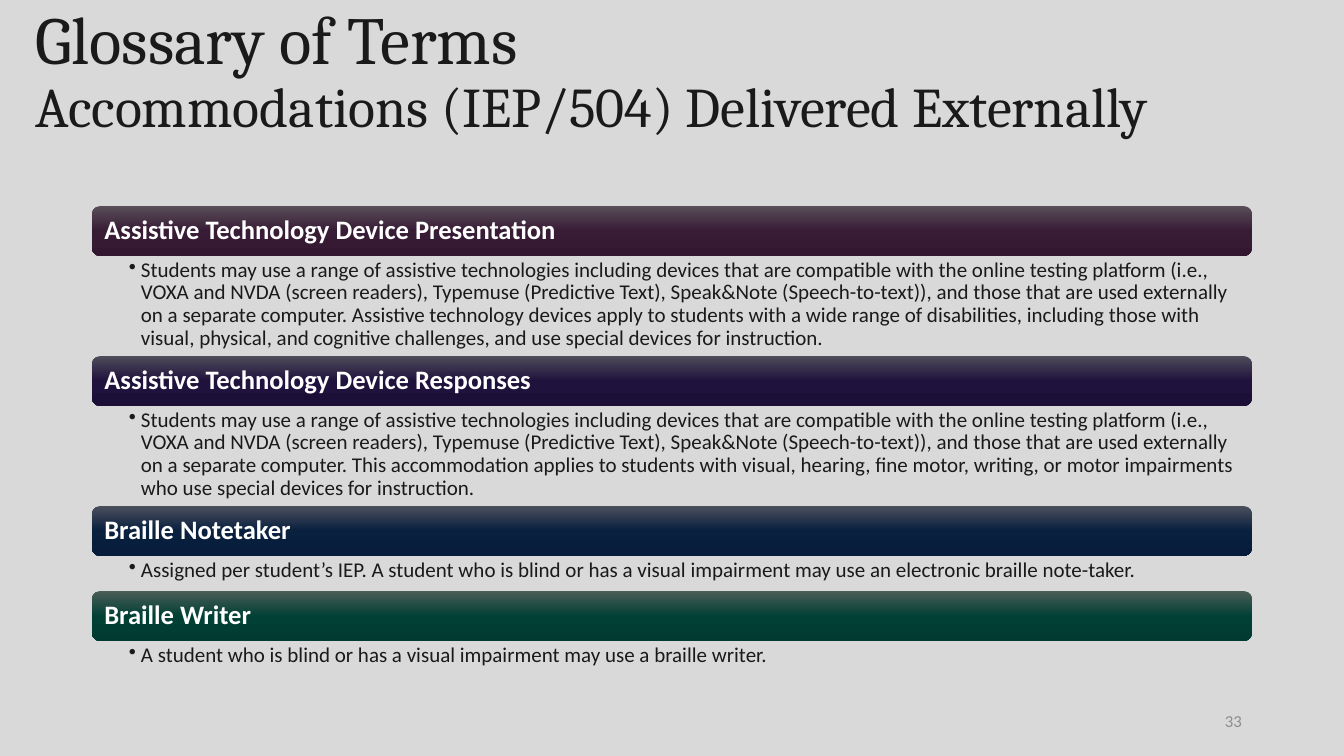
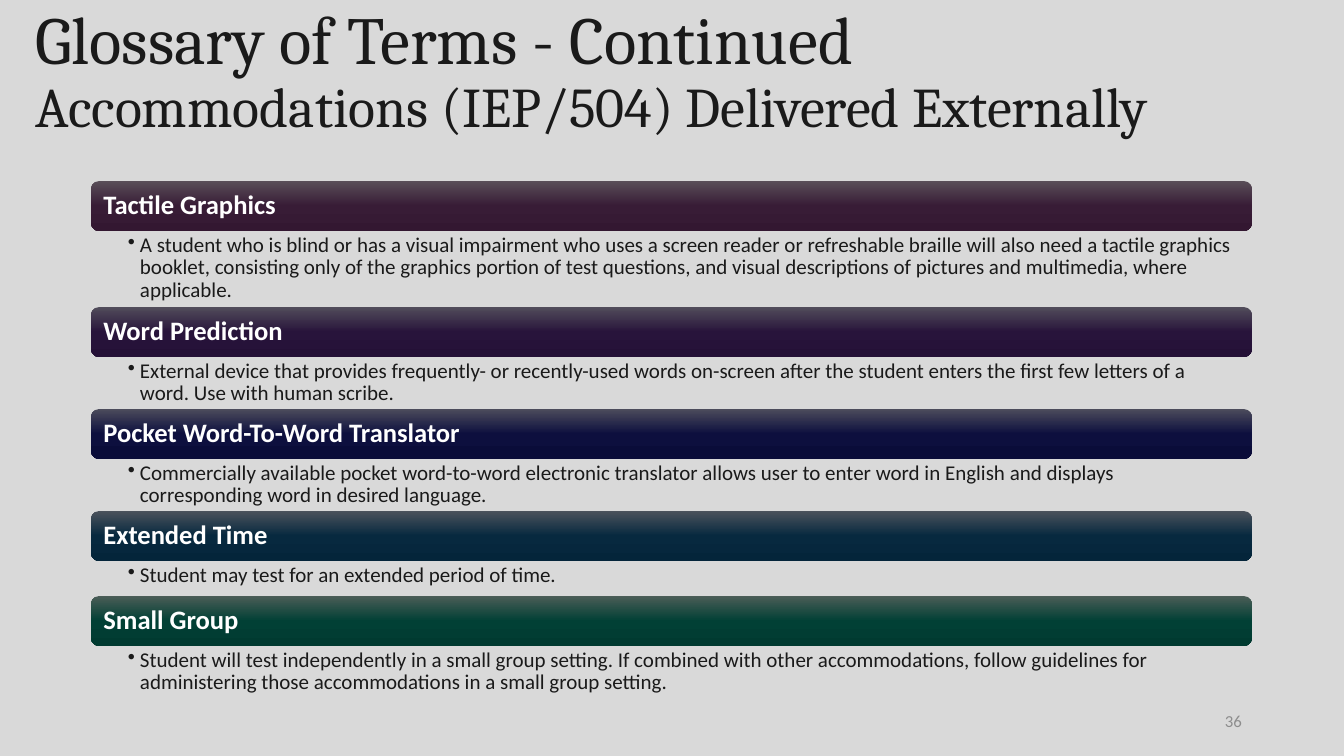
from copy import deepcopy

from lxml import etree
from pptx import Presentation
from pptx.dml.color import RGBColor
from pptx.enum import shapes, text
from pptx.oxml import ns

PX = 914400 / 100.8
WIDE, HIGH = 1344, 756
BAR = 50
DEPTHS = {1: 35, 2: 52, 3: 76, 4: 100}

GREY = RGBColor(0xD9, 0xD9, 0xD9)
INK = RGBColor(0x1A, 0x1A, 0x1A)
WHITE = RGBColor(0xFF, 0xFF, 0xFF)
DIM = RGBColor(0x8D, 0x8D, 0x8D)


def shades(*codes):
    """Return the colours of a gradient from top to bottom."""
    return [RGBColor.from_string(code) for code in codes]


PLUM = shades("594E58", "381C36", "331731")
GRAPE = shades("524D5B", "28143B", "241036")
VIOLET = shades("4F4C5B", "1F123C", "1B0E37")
INDIGO = shades("4C4C5C", "0D0F3E", "0A0C39")
NAVY = shades("4B4F5C", "09203F", "061C3A")
TEAL = shades("4B525C", "07293F", "04253A")
GREEN = shades("4B5D57", "014035", "003A30")

SUBJECT = "Accommodations (IEP/504) Delivered Externally"
DEVICES = (
    "Students may use a range of assistive technologies including devices that are "
    "compatible with the online testing platform (i.e., VOXA and NVDA (screen readers), "
    "Typemuse (Predictive Text), Speak&Note (Speech-to-text)), and those that are used "
    "externally on a separate computer. "
)

TERMS = [
    ("Assistive Technology Device Presentation", PLUM, 4, DEVICES +
     "Assistive technology devices apply to students with a wide range of disabilities, "
     "including those with visual, physical, and cognitive challenges, and use special "
     "devices for instruction."),
    ("Assistive Technology Device Responses", VIOLET, 4, DEVICES +
     "This accommodation applies to students with visual, hearing, fine motor, writing, "
     "or motor impairments who use special devices for instruction."),
    ("Braille Notetaker", NAVY, 1,
     "Assigned per student’s IEP. A student who is blind or has a visual impairment may "
     "use an electronic braille note-taker."),
    ("Braille Writer", GREEN, 1,
     "A student who is blind or has a visual impairment may use a braille writer."),
]

MORE = [
    ("Tactile Graphics", PLUM, 3,
     "A student who is blind or has a visual impairment who uses a screen reader or "
     "refreshable braille will also need a tactile graphics booklet, consisting only of "
     "the graphics portion of test questions, and visual descriptions of pictures and "
     "multimedia, where applicable."),
    ("Word Prediction", GRAPE, 2,
     "External device that provides frequently- or recently-used words on-screen after "
     "the student enters the first few letters of a word. Use with human scribe."),
    ("Pocket Word-To-Word Translator", INDIGO, 2,
     "Commercially available pocket word-to-word electronic translator allows user to "
     "enter word in English and displays corresponding word in desired language."),
    ("Extended Time", TEAL, 1, "Student may test for an extended period of time."),
    ("Small Group", GREEN, 2,
     "Student will test independently in a small group setting. If combined with other "
     "accommodations, follow guidelines for administering those accommodations in a small "
     "group setting."),
]


def px(size):
    """Turn px into EMU."""
    return round(size * PX)


def place(*box):
    """Turn a px box into EMU lengths."""
    return [px(size) for size in box]


def write(shape, *lines, sizes, font="Calibri", color=INK, bold=False, bullet=False,
          align=text.PP_ALIGN.LEFT, anchor=text.MSO_ANCHOR.MIDDLE, pads=(10, 5, 10, 5),
          space=0.9):
    """Write lines as one paragraph, each line in its own size."""
    frame = shape.text_frame
    frame.word_wrap = True
    frame.auto_size = text.MSO_AUTO_SIZE.NONE
    frame.vertical_anchor = anchor
    (frame.margin_left, frame.margin_top,
     frame.margin_right, frame.margin_bottom) = place(*pads)
    para = frame.paragraphs[0]
    if bullet:
        props = para._p.get_or_add_pPr()
        props.set("marL", str(px(12)))
        props.set("indent", str(-px(12)))
        etree.SubElement(props, ns.qn("a:buChar")).set("char", "•")
    para.alignment = align
    para.line_spacing = space
    for index, (line, size) in enumerate(zip(lines, sizes)):
        if index:
            para.add_line_break()
        run = para.add_run()
        run.text = line
        run.font.name = font
        run.font.size = size * 12700
        run.font.bold = bold
        run.font.color.rgb = color


def shade(shape, colors):
    """Fill a shape from top to bottom with three even stops."""
    fill = shape.fill
    fill.gradient()
    fill.gradient_angle = 270
    stops = next(shape._element.spPr.iter(ns.qn("a:gsLst")))
    stops.insert(1, deepcopy(stops[0]))
    for stop, part, color in zip(fill.gradient_stops, (0, 0.5, 1), colors):
        stop.position = part
        stop.color.rgb = color


def entry(slide, box, name, colors, note):
    """Draw a term bar with its meaning below."""
    left, top, width, height = box
    bar = slide.shapes.add_shape(
        shapes.MSO_SHAPE.ROUNDED_RECTANGLE, *place(left, top, width, BAR))
    bar.shadow.inherit = False
    bar.line.fill.background()
    shade(bar, colors)
    write(bar, name, sizes=[19], color=WHITE, bold=True, pads=(10, 8, 10, 8))
    body = slide.shapes.add_textbox(*place(left, top + BAR, width, height - BAR))
    write(body, note, sizes=[15], bullet=True, anchor=text.MSO_ANCHOR.TOP,
          pads=(37, 3, 15, 3))


def stack(slide, box, terms):
    """Stack the terms down from the top of a box."""
    left, top, width = box
    for name, colors, rows, note in terms:
        height = BAR + DEPTHS[rows]
        entry(slide, (left, top, width, height), name, colors, note)
        top += height


def page(deck, head, number, box, terms):
    """Add a glossary slide."""
    slide = deck.slides.add_slide(deck.slide_layouts[5])
    title = slide.shapes.title
    title.left, title.top, title.width, title.height = place(25, 0, 1294, 146)
    write(title, head, SUBJECT, sizes=[48, 40], font="Cambria")
    stack(slide, box, terms)
    foot = slide.shapes.add_textbox(*place(950, 701, 302, 40))
    write(foot, number, sizes=[12], color=DIM, align=text.PP_ALIGN.RIGHT, space=1.0)


def main():
    """Build the deck."""
    deck = Presentation()
    deck.slide_width, deck.slide_height = place(WIDE, HIGH)
    back = deck.slide_master.background.fill
    back.solid()
    back.fore_color.rgb = GREY
    page(deck, "Glossary of Terms", "33", (92, 206, 1160), TERMS)
    page(deck, "Glossary of Terms - Continued", "36", (91, 181, 1161), MORE)
    deck.save("out.pptx")


if __name__ == "__main__":
    main()
